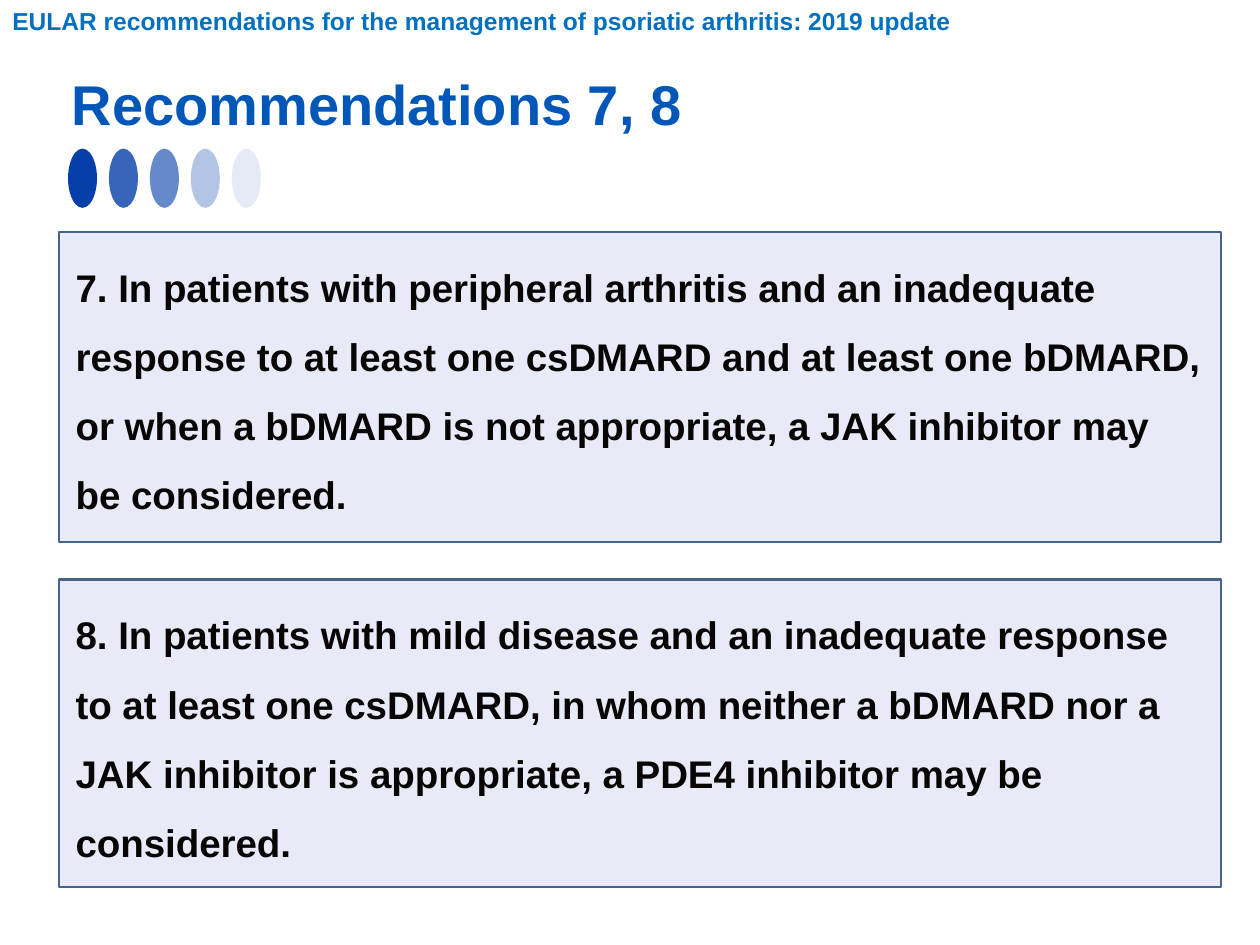
from lxml import etree
from pptx import Presentation
from pptx import util as u
from pptx.dml.color import RGBColor
from pptx.enum import shapes, text
from pptx.oxml.ns import qn

WIDTH, HEIGHT = 10, 7.5
LEFT = 0.47
PANEL_WIDTH = 9.22
DOT_LEFT, DOT_TOP, DOT_STEP = 0.54, 1.18, 0.325
DOT_WIDTH, DOT_HEIGHT = 0.23, 0.47
DOT_OPACITIES = (100, 80, 61, 30, 10)

DOT_BLUE = RGBColor(0x06, 0x3F, 0xA9)
TITLE_BLUE = RGBColor(0x00, 0x57, 0xB8)
HEADER_BLUE = RGBColor(0x00, 0x70, 0xC0)
PANEL_FILL = RGBColor(0xE8, 0xEB, 0xF7)
PANEL_EDGE = RGBColor(0x46, 0x64, 0x88)
INK = RGBColor(0x07, 0x06, 0x05)

PANELS = (
    (1.84, 2.46, "7. In patients with peripheral arthritis and an inadequate "
     "response to at least one csDMARD and at least one bDMARD, or when a "
     "bDMARD is not appropriate, a JAK inhibitor may be considered."),
    (4.6, 2.44, "8. In patients with mild disease and an inadequate response "
     "to at least one csDMARD, in whom neither a bDMARD nor a JAK inhibitor "
     "is appropriate, a PDE4 inhibitor may be considered."),
)


def apply(target, values):
    for name, value in values.items():
        setattr(target, name, value)


def inches(*lengths):
    return [u.Inches(length) for length in lengths]


def write(box, wording, size, color, frame_format, para_format):
    frame = box.text_frame
    apply(frame, {"vertical_anchor": text.MSO_ANCHOR.TOP, **frame_format})
    para = frame.paragraphs[0]
    apply(para, {"alignment": text.PP_ALIGN.LEFT, **para_format})
    span = para.add_run()
    span.text = wording
    apply(span.font, {"name": "Arial", "size": u.Pt(size), "bold": True})
    span.font.color.rgb = color


def add_heading(page, area, wording, size, color):
    box = page.shapes.add_textbox(*inches(*area))
    write(box, wording, size, color,
          {"word_wrap": False, "auto_size": text.MSO_AUTO_SIZE.SHAPE_TO_FIT_TEXT},
          {})


def add_dots(page):
    group = page.shapes.add_group_shape()
    for column, opacity in enumerate(DOT_OPACITIES):
        dot = group.shapes.add_shape(
            shapes.MSO_SHAPE.OVAL,
            *inches(DOT_LEFT + column * DOT_STEP, DOT_TOP, DOT_WIDTH, DOT_HEIGHT))
        dot.shadow.inherit = False
        dot.fill.solid()
        dot.fill.fore_color.rgb = DOT_BLUE
        dot.line.fill.background()
        if opacity < 100:
            color = dot.fill._xPr.find(qn("a:solidFill"))[0]
            etree.SubElement(color, qn("a:alpha"), val=str(opacity * 1000))


def add_panel(page, top, height, wording):
    box = page.shapes.add_shape(shapes.MSO_SHAPE.RECTANGLE,
                                *inches(LEFT, top, PANEL_WIDTH, height))
    box.shadow.inherit = False
    box.fill.solid()
    box.fill.fore_color.rgb = PANEL_FILL
    box.line.color.rgb = PANEL_EDGE
    box.line.width = u.Pt(1.25)
    side, edge = inches(0.13, 0.07)
    write(box, wording, 22, INK,
          {"word_wrap": True, "margin_left": side, "margin_right": side,
           "margin_top": edge, "margin_bottom": edge},
          {"line_spacing": 1.5})


def main():
    deck = Presentation()
    deck.slide_width, deck.slide_height = inches(WIDTH, HEIGHT)
    page = deck.slides.add_slide(deck.slide_layouts[6])

    # Row of fading dots below the title
    add_dots(page)

    # Running header and title
    add_heading(page, (0, 0, 7.68, 0.34),
                "EULAR recommendations for the management of psoriatic "
                "arthritis: 2019 update", 14, HEADER_BLUE)
    add_heading(page, (LEFT, 0.5, 5.08, 0.64),
                "Recommendations 7, 8", 32, TITLE_BLUE)

    # One panel per recommendation
    for top, height, wording in PANELS:
        add_panel(page, top, height, wording)

    deck.save("out.pptx")


if __name__ == "__main__":
    main()
